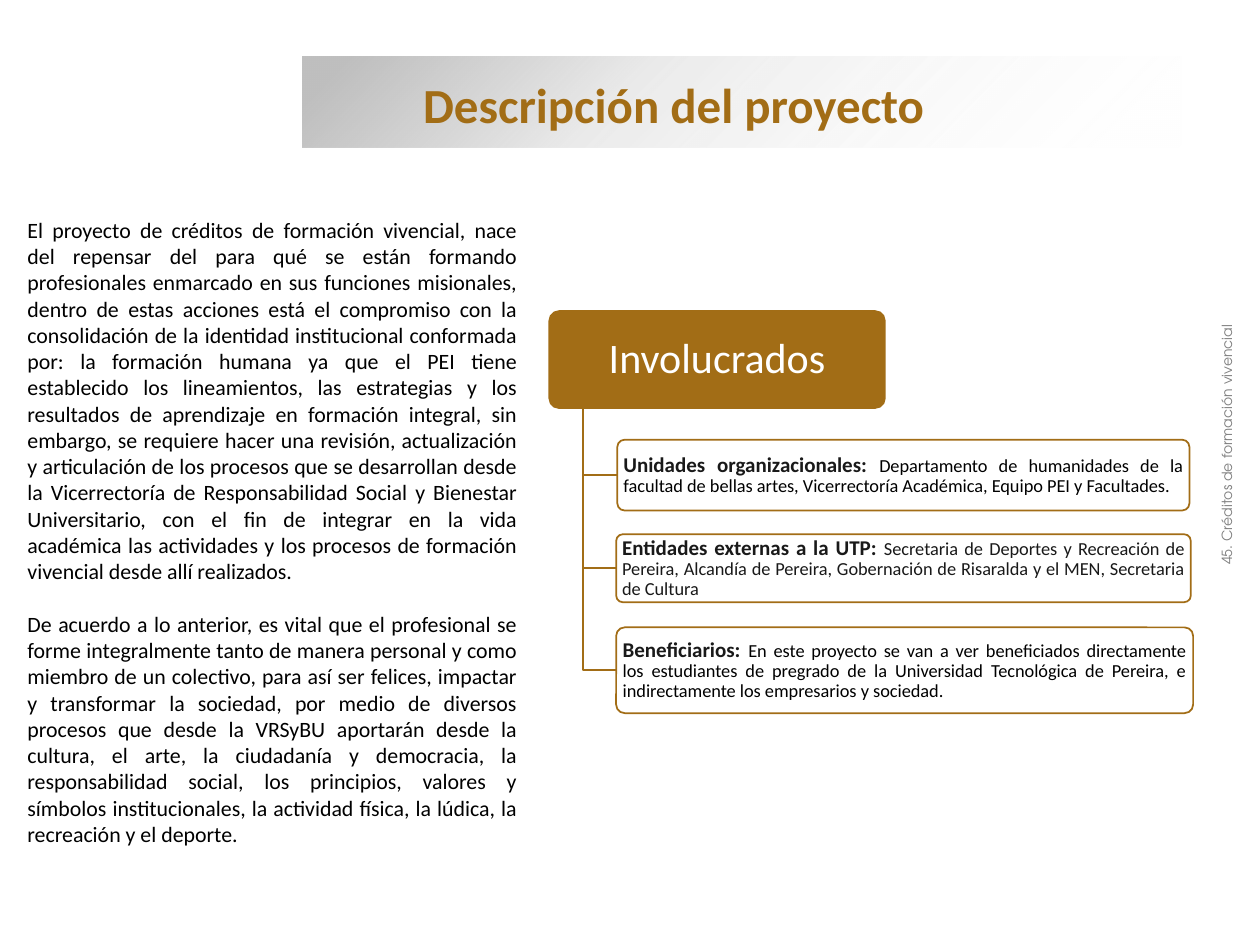
import pptx
import pptx.util
import pptx.dml.color
import pptx.enum.shapes
import pptx.enum.text
import pptx.oxml
import pptx.oxml.ns

Pt = pptx.util.Pt
ALIGN = pptx.enum.text.PP_ALIGN
SHAPES = pptx.enum.shapes.MSO_SHAPE

# Content
COLORS = {"gold": "A26D16", "white": "FFFFFF", "black": "000000",
          "ink": "191919", "gray": "808080", "silver": "BFBFBF"}
TITLE = "Descripción del proyecto"
BODY = [
    "El proyecto de créditos de formación vivencial, nace del repensar del para qué se están formando "
    "profesionales enmarcado en sus funciones misionales, dentro de estas acciones está el compromiso con la "
    "consolidación de la identidad institucional conformada por: la formación humana ya que el PEI tiene "
    "establecido los lineamientos, las estrategias y los resultados de aprendizaje en formación integral, sin "
    "embargo, se requiere hacer una revisión, actualización y articulación de los procesos que se desarrollan "
    "desde la Vicerrectoría de Responsabilidad Social y Bienestar Universitario, con el fin de integrar en la "
    "vida académica las actividades y los procesos de formación vivencial desde allí realizados.",
    "De acuerdo a lo anterior, es vital que el profesional se forme integralmente tanto de manera personal y "
    "como miembro de un colectivo, para así ser felices, impactar y transformar la sociedad, por medio de "
    "diversos procesos que desde la VRSyBU aportarán desde la cultura, el arte, la ciudadanía y democracia, la "
    "responsabilidad social, los principios, valores y símbolos institucionales, la actividad física, la "
    "lúdica, la recreación y el deporte.",
]
SIDE_LABEL = "45. Créditos de formación vivencial"
ROOT = "Involucrados"
# heading, detail, detail color, (left, top, width, height)
BRANCHES = [
    ("Unidades organizacionales: ",
     "Departamento de humanidades de la facultad de bellas artes, Vicerrectoría Académica, "
     "Equipo PEI y Facultades.", "black", (352.8, 251.3, 326.9, 40.4)),
    ("Entidades externas a la UTP: ",
     "Secretaria de Deportes y Recreación de Pereira, Alcandía de Pereira, Gobernación de "
     "Risaralda y el MEN, Secretaria de Cultura", "ink", (352.1, 305.3, 328.4, 38.9)),
    ("Beneficiarios: ",
     "En este proyecto se van a ver beneficiados directamente los estudiantes de pregrado de la "
     "Universidad Tecnológica de Pereira, e indirectamente los empresarios y sociedad.",
     "black", (352.1, 358.5, 329.7, 49)),
]

# Layout, in points: left, top, width, height
BAND = (172.8, 32.4, 502.6, 51.8)
TITLE_BOX = (234.7, 38.9, 446.4, 41)
BODY_BOX = (8.6, 120.2, 293.8, 370.8)
SIDE_BOX = (527, 245.5, 348.5, 17.3)
ROOT_BOX = (313.9, 177.8, 191.7, 55.4)
BAND_STOPS = [(5, "silver", 100), (37, "silver", 31), (100, "white", 0)]

presentation = pptx.Presentation()
presentation.slide_width, presentation.slide_height = Pt(720), Pt(540)
slide = presentation.slides.add_slide(presentation.slide_layouts[6])


def rgb(name):
    return pptx.dml.color.RGBColor.from_string(COLORS[name])


def set_all(target, values):
    for name, value in values.items():
        setattr(target, name, value)


def write(shape, paragraphs, insets=(7.2, 3.6), middle=False, **paragraph_format):
    """Each paragraph is a list of (text, size, color, bold, font) runs."""
    frame = shape.text_frame
    anchor = pptx.enum.text.MSO_ANCHOR
    side, edge = map(Pt, insets)
    set_all(frame, {"word_wrap": True, "margin_left": side, "margin_right": side,
                    "margin_top": edge, "margin_bottom": edge,
                    "vertical_anchor": anchor.MIDDLE if middle else anchor.TOP})
    for index, runs in enumerate(paragraphs):
        paragraph = frame.add_paragraph() if index else frame.paragraphs[0]
        set_all(paragraph, paragraph_format)
        if index:
            paragraph.space_before = Pt(15.25)
        for text, size, color, bold, font in runs:
            run = paragraph.add_run()
            run.text = text
            set_all(run.font, {"size": Pt(size), "bold": bold, "name": font})
            run.font.color.rgb = rgb(color)


def add_text(box, paragraphs, **options):
    shape = slide.shapes.add_textbox(*map(Pt, box))
    write(shape, paragraphs, **options)
    return shape


def outline(shape):
    shape.shadow.inherit = False
    shape.line.color.rgb = rgb("gold")
    shape.line.width = Pt(1)


def add_rounded(box, fill):
    shape = slide.shapes.add_shape(SHAPES.ROUNDED_RECTANGLE, *map(Pt, box))
    shape.adjustments[0] = 0.1
    shape.fill.solid()
    shape.fill.fore_color.rgb = rgb(fill)
    outline(shape)
    return shape


# Title band with a fading gradient
band = slide.shapes.add_shape(SHAPES.RECTANGLE, *map(Pt, BAND))
band.shadow.inherit = False
band.line.fill.background()
band.fill.gradient()
gradient = band.fill._fill._gradFill
for child in list(gradient):
    gradient.remove(child)
namespace = pptx.oxml.ns.nsdecls("a")
stops = "".join(
    f'<a:gs pos="{position * 1000}"><a:srgbClr val="{COLORS[color]}">'
    f'<a:alpha val="{opacity * 1000}"/></a:srgbClr></a:gs>'
    for position, color, opacity in BAND_STOPS)
gradient.append(pptx.oxml.parse_xml(f"<a:gsLst {namespace}>{stops}</a:gsLst>"))
gradient.append(pptx.oxml.parse_xml(f'<a:lin {namespace} ang="2700000" scaled="0"/>'))
add_text(TITLE_BOX, [[(TITLE, 28, "gold", True, "Calibri")]], middle=True)

# Stakeholder hierarchy: root, elbows and branches
write(add_rounded(ROOT_BOX, "gold"), [[(ROOT, 24, "white", False, "Calibri")]],
      insets=(4, 2), middle=True, alignment=ALIGN.CENTER, line_spacing=0.9)
root_left, root_top, root_width, root_height = ROOT_BOX
trunk, root_bottom = root_left + root_width / 10, root_top + root_height
for heading, detail, color, box in BRANCHES:
    left, top, width, height = box
    center = top + height / 2
    builder = slide.shapes.build_freeform(Pt(trunk), Pt(root_bottom))
    builder.add_line_segments([(Pt(trunk), Pt(center)), (Pt(left), Pt(center))], close=False)
    elbow = builder.convert_to_shape()
    elbow.fill.background()
    outline(elbow)
    write(add_rounded(box, "white"),
          [[(heading, 12, "ink", True, "Calibri"), (detail, 10.5, color, False, "Calibri")]],
          insets=(2.3, 1.2), middle=True, alignment=ALIGN.JUSTIFY, line_spacing=0.9)

# Body text and rotated side label
add_text(BODY_BOX, [[(text, 12.5, "black", False, "Calibri")] for text in BODY],
         alignment=ALIGN.JUSTIFY)
side_label = add_text(SIDE_BOX, [[(SIDE_LABEL, 8, "gray", False, "TeX Gyre Adventor")]],
                      alignment=ALIGN.CENTER)
side_label.rotation = 270

presentation.save("out.pptx")
